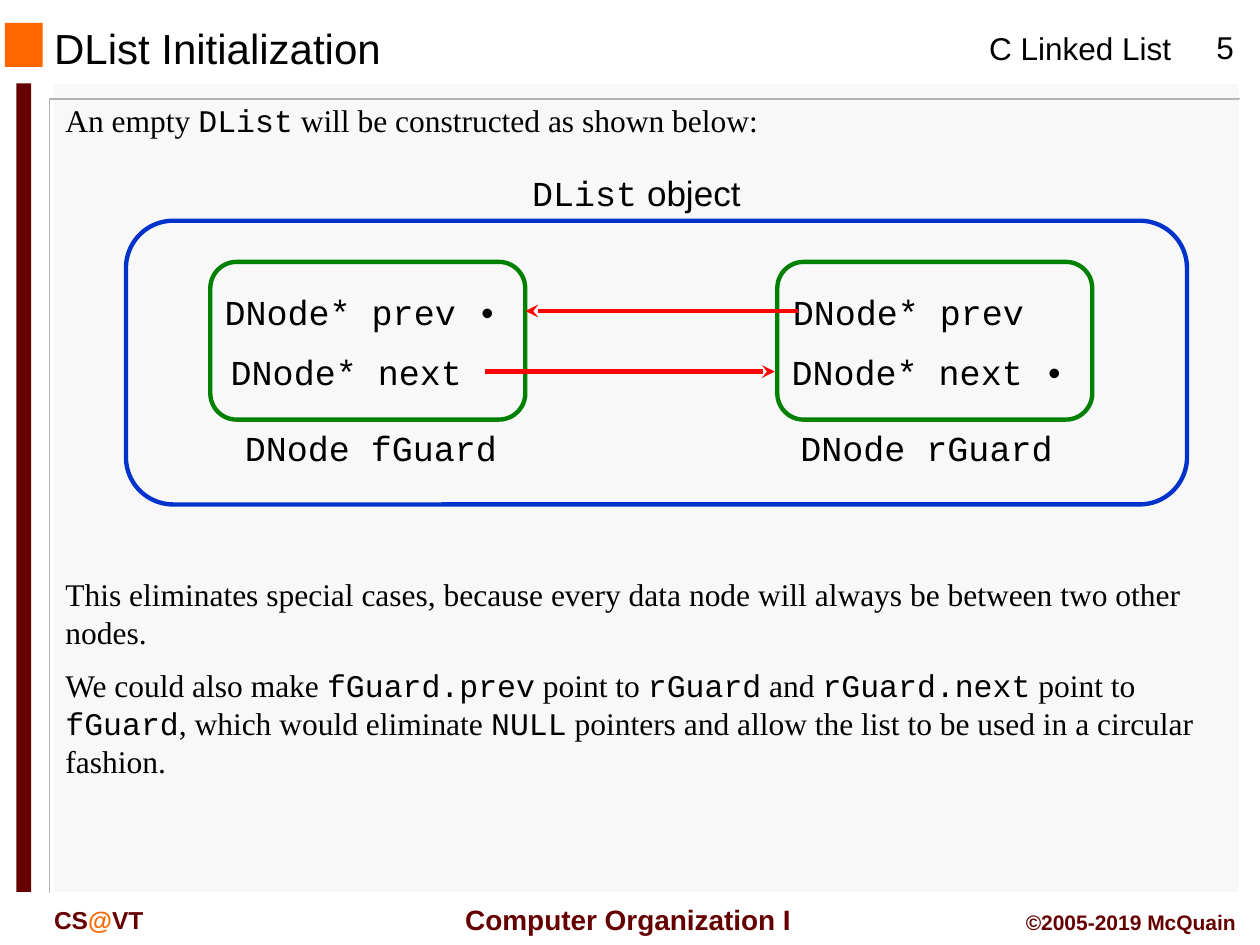
"""Build the DList initialization slide with its guard node diagram."""
from dataclasses import dataclass
from typing import Optional

from lxml import etree
from pptx import Presentation
from pptx import util as u
from pptx.dml.color import RGBColor
from pptx.enum import shapes, text
from pptx.oxml import ns

COLORS = {"black": "000000", "panel": "F8F8F8", "edge": "B2B2B2", "white": "FFFFFF",
          "orange": "FF6600", "maroon": "660000", "blue": "0033CC", "green": "008000", "red": "FF0000"}
SANS, MONO, SERIF = "Arial", "Courier New", "Times New Roman"
LEFT, CENTER, RIGHT = text.PP_ALIGN.LEFT, text.PP_ALIGN.CENTER, text.PP_ALIGN.RIGHT
TOP, MIDDLE = text.MSO_ANCHOR.TOP, text.MSO_ANCHOR.MIDDLE


@dataclass
class Run:
    words: str
    font: str = SERIF
    color: str = "black"
    bold: bool = False


@dataclass
class Label:
    box: tuple
    paragraphs: list
    size: int = 18
    align: text.PP_ALIGN = LEFT
    anchor: text.MSO_ANCHOR = TOP
    wrap: bool = True


@dataclass
class Box:
    box: tuple
    kind: shapes.MSO_SHAPE
    fill: Optional[str] = None
    line: Optional[str] = None


@dataclass
class Line:
    points: list
    color: str


def code(words: str) -> Run:
    return Run(words, MONO)


def footer(words: str, color: str = "maroon") -> Run:
    return Run(words, SANS, color, True)


def diagram_label(box: tuple, *runs: Run) -> Label:
    return Label(box, [runs], 20, CENTER)


def rgb(name: str) -> RGBColor:
    return RGBColor.from_string(COLORS[name])


def apply(target, values: dict) -> None:
    for name, value in values.items():
        setattr(target, name, value)


def write(sp, label: Label) -> None:
    places = map(u.Cm, label.box)
    apply(sp, dict(zip(("left", "top", "width", "height"), places)))
    tf = sp.text_frame
    side, edge = u.Cm(0.25), u.Cm(0.13)
    apply(tf, {"word_wrap": label.wrap, "vertical_anchor": label.anchor, "margin_left": side,
               "margin_right": side, "margin_top": edge, "margin_bottom": edge})
    for i, runs in enumerate(label.paragraphs):
        p = tf.add_paragraph() if i else tf.paragraphs[0]
        apply(p, {"alignment": label.align, "space_before": u.Pt(9 if i else 0)})
        for run in runs:
            r = p.add_run()
            r.text = run.words
            apply(r.font, {"name": run.font, "size": u.Pt(label.size), "bold": run.bold})
            r.font.color.rgb = rgb(run.color)


def add_label(s, label: Label) -> None:
    write(s.shapes.add_textbox(*map(u.Cm, label.box)), label)


def add_box(s, item: Box) -> None:
    sp = s.shapes.add_shape(item.kind, *map(u.Cm, item.box))
    sp.shadow.inherit = False
    if item.fill:
        sp.fill.solid()
        sp.fill.fore_color.rgb = rgb(item.fill)
    else:
        sp.fill.background()
    if item.line:
        apply(sp.line, {"width": u.Pt(2.5)})
        sp.line.color.rgb = rgb(item.line)
    else:
        sp.line.fill.background()


def add_edge(s, item: Line) -> None:
    start, *rest = item.points
    builder = s.shapes.build_freeform(*start, scale=u.Cm(1))
    builder.add_line_segments(rest, close=False)
    sp = builder.convert_to_shape()
    sp.shadow.inherit = False
    sp.fill.background()
    sp.line.width = u.Pt(1)
    sp.line.color.rgb = rgb(item.color)


def add_arrow(s, item: Line) -> None:
    start, end = item.points
    sp = s.shapes.add_connector(shapes.MSO_CONNECTOR.STRAIGHT, *map(u.Cm, start + end))
    sp.line.width = u.Pt(2.5)
    sp.line.color.rgb = rgb(item.color)
    etree.SubElement(sp.line._get_or_add_ln(), ns.qn("a:tailEnd"), type="stealth")
    etree.SubElement(sp._element.spPr, ns.qn("a:effectLst"))


RECT, ROUND = shapes.MSO_SHAPE.RECTANGLE, shapes.MSO_SHAPE.ROUNDED_RECTANGLE
TITLE = Label((0.84, 0.48, 16.08, 0.97), [[Run("DList Initialization", SANS)]], 24, anchor=MIDDLE)
FRAME = [
    Box((1.09, 1.7, 23.88, 16.28), RECT, "panel"),
    Box((0.1, 0.46, 0.76, 0.89), RECT, "orange"),
    Box((0.33, 1.68, 0.3, 16.3), RECT, "maroon"),
]
EDGES = [
    Line([(24.92, 1.7), (1.07, 1.7), (1.07, 17.98)], "edge"),
    Line([(24.97, 1.7), (24.97, 17.98), (1.12, 17.98)], "white"),
]
OBJECTS = [Box((2.54, 4.45, 21.39, 5.72), ROUND, line="blue")]
OBJECTS += [Box((left, 5.28, 6.35, 3.18), ROUND, line="green") for left in (4.24, 15.67)]
ARROWS = [
    Line([(9.78, 7.49), (15.62, 7.49)], "red"),
    Line([(16.08, 6.27), (10.59, 6.27)], "red"),
]
LABELS = [
    Label((19.69, 0.46, 4.22, 1.02), [[Run("C Linked List", SANS)]], wrap=False),
    Label((23.85, 0.43, 1.7, 1.02), [[Run("5", SANS)]], align=CENTER),
    Label((8.89, 18.06, 7.39, 0.94), [[footer(" Computer Organization I")]], 16, CENTER, MIDDLE, False),
    Label((0.84, 18.11, 3.81, 0.84), [[footer("CS"), footer("@", "orange"), footer("VT")]], 14),
    Label((19.89, 18.21, 5.28, 0.76), [[footer("©2005-2019 McQuain")]], 12, RIGHT),
    Label((1.07, 1.91, 23.93, 1.02),
          [[Run("An empty "), code("DList"), Run(" will be constructed as shown below:")]]),
    diagram_label((10.29, 3.33, 5.08, 1.12), code("DList"), Run(" object", SANS)),
    diagram_label((4.65, 8.46, 5.66, 1.12), code("DNode fGuard")),
    diagram_label((15.77, 8.46, 5.82, 1.12), code("DNode rGuard")),
    diagram_label((4.01, 5.72, 6.55, 1.12), code("DNode* prev •")),
    diagram_label((15.44, 6.93, 6.55, 1.12), code("DNode* next •")),
    diagram_label((3.71, 6.93, 6.55, 1.12), code("DNode* next")),
    diagram_label((15.04, 5.72, 6.55, 1.12), code("DNode* prev")),
    Label((1.07, 11.46, 23.93, 4.5), [
        [Run("This eliminates special cases, because every data node will always be "
             "between two other nodes.")],
        [Run("We could also make "), code("fGuard.prev"), Run(" point to "), code("rGuard"),
         Run(" and "), code("rGuard.next"), Run(" point to "), code("fGuard"),
         Run(", which would eliminate "), code("NULL"),
         Run(" pointers and allow the list to be used in a circular fashion.")],
    ]),
]


def main() -> None:
    prs = Presentation()
    apply(prs, {"slide_width": u.Cm(25.4), "slide_height": u.Cm(19.05)})
    s = prs.slides.add_slide(prs.slide_layouts[5])
    write(s.shapes.title, TITLE)
    for draw, items in ((add_box, FRAME), (add_edge, EDGES), (add_box, OBJECTS),
                        (add_label, LABELS), (add_arrow, ARROWS)):
        for item in items:
            draw(s, item)
    prs.save("out.pptx")


if __name__ == "__main__":
    main()
